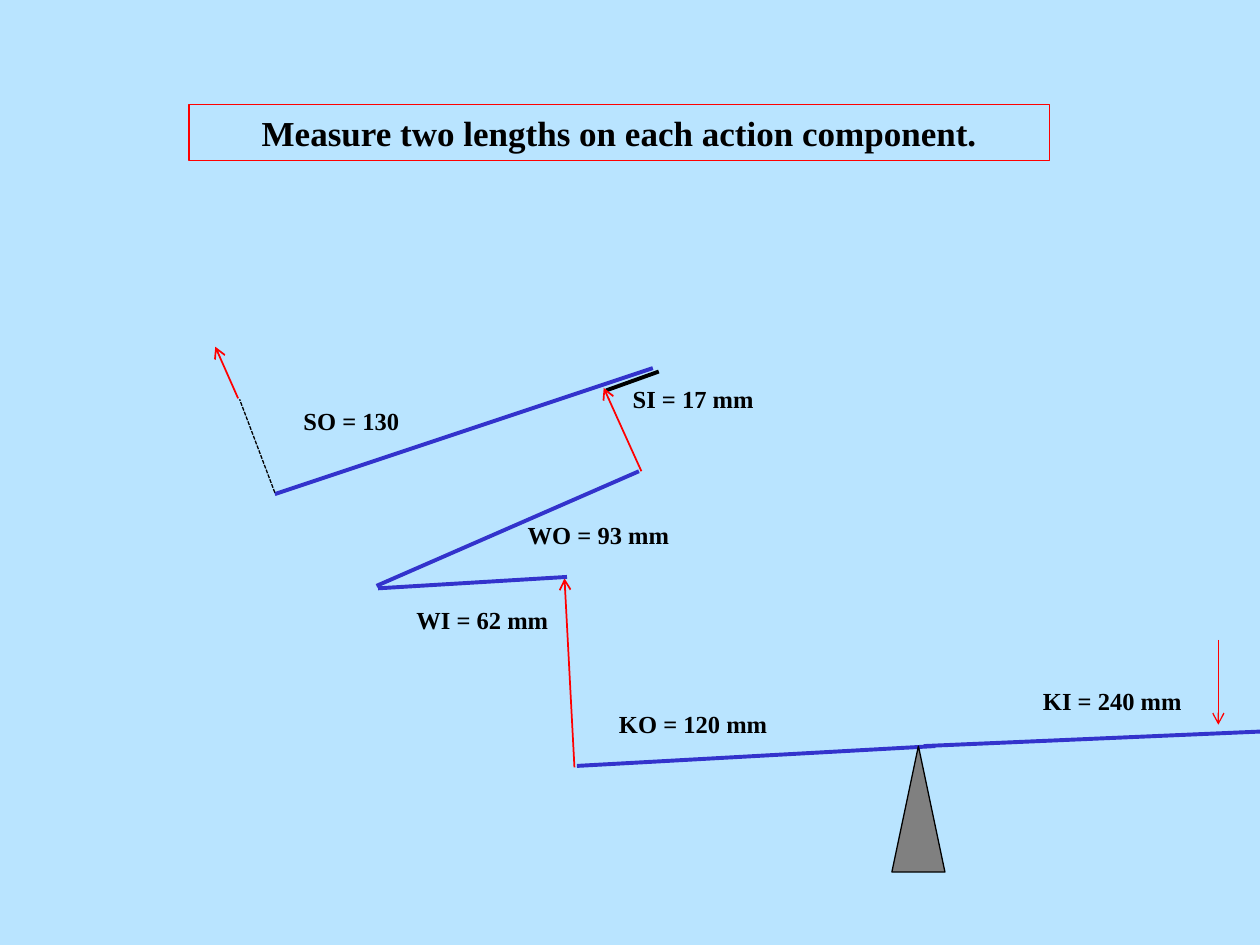
from typing import NamedTuple

from lxml import etree
from pptx import Presentation
from pptx.dml.color import RGBColor
from pptx.enum.dml import MSO_LINE
from pptx.enum.shapes import MSO_CONNECTOR, MSO_SHAPE
from pptx.enum.text import MSO_ANCHOR, MSO_AUTO_SIZE, PP_ALIGN
from pptx.oxml.ns import qn
from pptx.util import Cm, Pt

STRAIGHT = MSO_CONNECTOR.STRAIGHT
TRIANGLE = MSO_SHAPE.ISOSCELES_TRIANGLE
DASHED = MSO_LINE.SQUARE_DOT
CENTER = PP_ALIGN.CENTER
TOP = MSO_ANCHOR.TOP
NO_AUTOFIT = MSO_AUTO_SIZE.NONE

FONT = "Times New Roman"
SKY, BLUE, RED, BLACK, GRAY = "B9E4FF", "3333CC", "FF0000", "000000", "808080"
LABEL_HEIGHT = 0.86
TITLE_ONLY_LAYOUT = 5


class Line(NamedTuple):
    """Straight line with its ends in centimetres and its width in points."""
    start: tuple[float, float]
    end: tuple[float, float]
    color: str = BLUE
    width: float = 2.25
    arrow: bool = False
    dashed: bool = False


class Label(NamedTuple):
    """Measured length, placed in centimetres."""
    text: str
    left: float
    top: float
    width: float = 3.81


LINES = [
    # KI and KO, with the arrow up to WI
    Line((18.62, 15.04), (33.45, 14.4)),
    Line((18.85, 15.04), (11.63, 15.44)),
    Line((11.58, 15.47), (11.38, 11.66), RED, 1, arrow=True),
    # WI and WO
    Line((7.62, 11.86), (11.43, 11.63)),
    Line((7.59, 11.81), (12.88, 9.5)),
    # SI and SO, with the arrows at both ends
    Line((13.28, 7.49), (12.22, 7.87), BLACK),
    Line((13.16, 7.42), (5.54, 9.96)),
    Line((12.93, 9.5), (12.17, 7.82), RED, 1, arrow=True),
    Line((4.8, 8.03), (4.34, 6.99), RED, 1, arrow=True),
    Line((5.54, 9.93), (4.83, 8.05), BLACK, 0.75, dashed=True),
    # Arrow down to KI
    Line((24.56, 12.9), (24.56, 14.61), RED, 0.75, arrow=True),
]

LABELS = [
    Label("WO = 93 mm", 10.16, 10.36),
    Label("SO = 130", 5.28, 8.05, 3.61),
    Label("KI = 240 mm", 20.52, 13.69),
    Label("KO = 120 mm", 12.07, 14.17),
    Label("WI = 62 mm", 7.82, 12.07),
    Label("SI = 17 mm", 12.07, 7.62),
]


def paint(color_format, color: str) -> None:
    color_format.rgb = RGBColor.from_string(color)


def set_line(line, color: str, width: float) -> None:
    line.fill.solid()
    paint(line.fill.fore_color, color)
    line.width = Pt(width)


def write_text(shape, text: str, size: float) -> None:
    frame = shape.text_frame
    frame.word_wrap = True
    frame.auto_size = NO_AUTOFIT
    frame.vertical_anchor = TOP
    frame.margin_left = frame.margin_right = Cm(0.25)
    frame.margin_top = frame.margin_bottom = Cm(0.13)
    paragraph = frame.paragraphs[0]
    paragraph.alignment = CENTER
    run = paragraph.add_run()
    run.text = text
    run.font.name = FONT
    run.font.size = Pt(size)
    run.font.bold = True
    paint(run.font.color, BLACK)


def draw_line(slide, line: Line) -> None:
    connector = slide.shapes.add_connector(
        STRAIGHT, *(Cm(value) for value in line.start + line.end))
    set_line(connector.line, line.color, line.width)
    properties = connector._element.spPr
    if line.dashed:
        connector.line.dash_style = DASHED
    if line.arrow:
        outline = properties.find(qn("a:ln"))
        etree.SubElement(outline, qn("a:tailEnd"), type="arrow")
    etree.SubElement(properties, qn("a:effectLst"))


def draw_label(slide, label: Label) -> None:
    box = slide.shapes.add_textbox(
        Cm(label.left), Cm(label.top), Cm(label.width), Cm(LABEL_HEIGHT))
    write_text(box, label.text, 14)


def draw_triangle(slide) -> None:
    triangle = slide.shapes.add_shape(
        TRIANGLE, Cm(17.98), Cm(15.04), Cm(1.07), Cm(2.54))
    triangle.shadow.inherit = False
    triangle.fill.solid()
    paint(triangle.fill.fore_color, GRAY)
    set_line(triangle.line, BLACK, 0.75)


def draw_title(slide) -> None:
    title = slide.shapes.title
    title.left, title.top = Cm(3.81), Cm(2.11)
    title.width, title.height = Cm(17.35), Cm(1.12)
    set_line(title.line, RED, 0.75)
    write_text(title, "Measure two lengths on each action component.", 20)


def main() -> None:
    presentation = Presentation()
    presentation.slide_width, presentation.slide_height = Cm(25.4), Cm(19.05)
    slide = presentation.slides.add_slide(
        presentation.slide_layouts[TITLE_ONLY_LAYOUT])
    slide.background.fill.solid()
    paint(slide.background.fill.fore_color, SKY)

    draw_title(slide)
    for line in LINES:
        draw_line(slide, line)
    draw_triangle(slide)
    for label in LABELS:
        draw_label(slide, label)
    presentation.save("out.pptx")


if __name__ == "__main__":
    main()
